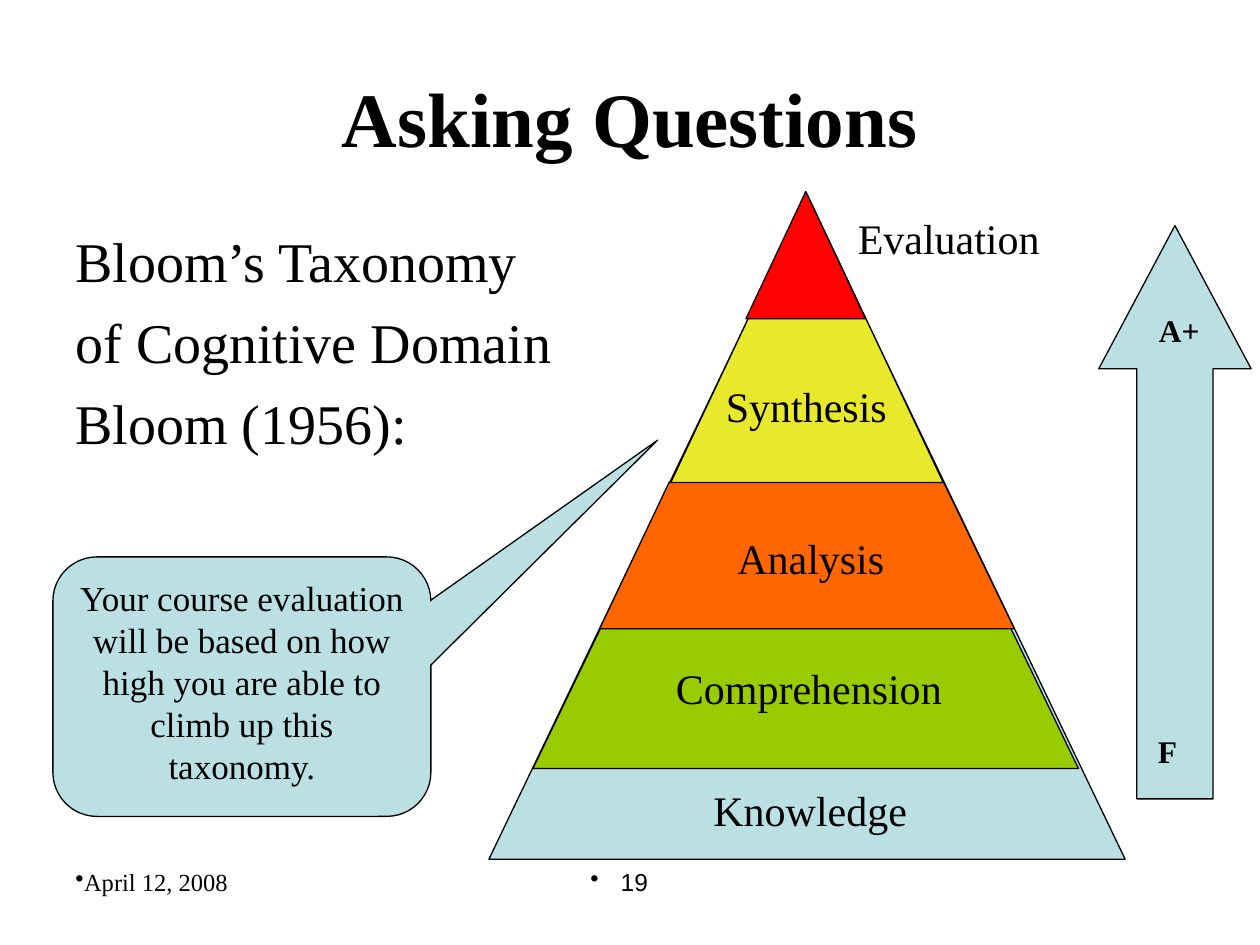
from dataclasses import dataclass

from lxml.etree import SubElement
from pptx import Presentation
from pptx.dml.color import RGBColor
from pptx.enum.shapes import MSO_SHAPE
from pptx.enum.text import MSO_ANCHOR, PP_ALIGN
from pptx.oxml.ns import qn
from pptx.util import Inches, Pt

# Grid of 100 columns by 75 rows
COLS, ROWS = 100, 75
WIDTH, HEIGHT = Inches(10), Inches(7.5)


@dataclass(frozen=True)
class Theme:
    serif: str = "Times New Roman"
    sans: str = "Arial"
    ink: str = "000000"
    pale: str = "BBE0E3"
    green: str = "99CC00"
    orange: str = "FF6600"
    yellow: str = "E9E92B"
    red: str = "FF0101"
    title: int = 44
    body: int = 32
    label: int = 24
    callout: int = 20
    grade: int = 18
    footer: int = 14
    outline: float = 0.75
    body_gap: float = 7.7


@dataclass(frozen=True)
class Box:
    col: float
    row: float
    cols: float
    rows: float

    def emu(self) -> tuple:
        return x(self.col), y(self.row), x(self.cols), y(self.rows)


@dataclass(frozen=True)
class Tier:
    box: Box
    color: str


@dataclass(frozen=True)
class Label:
    text: str
    box: Box
    align: PP_ALIGN = PP_ALIGN.CENTER


T = Theme()

TIERS = [
    Tier(Box(38.8, 15.6, 50.5, 52.6), T.pale),
    Tier(Box(42.3, 16.1, 43.3, 44.9), T.green),
    Tier(Box(51.3, 15.4, 25.5, 27), T.yellow),
    Tier(Box(59.2, 15.2, 9.5, 10.1), T.red),
]
ANALYSIS_BAND = [(80.5, 49.9), (74.9, 38.3), (53.1, 38.3), (47.6, 49.9)]
LABELS = [
    Label("Knowledge", Box(47.2, 61.8, 34.2, 5)),
    Label("Comprehension", Box(52.4, 52.1, 23.6, 5)),
    Label("Analysis", Box(57, 41.8, 14.7, 5)),
    Label("Synthesis", Box(55.7, 29.7, 16.6, 5)),
    Label("Evaluation", Box(67.1, 16.4, 18.8, 5), PP_ALIGN.LEFT),
]
GRADES = [
    Label("F", Box(90.9, 57.6, 5.2, 4), PP_ALIGN.LEFT),
    Label("A+", Box(91, 24.2, 6.7, 4), PP_ALIGN.LEFT),
]


def x(cols: float) -> int:
    return round(WIDTH * cols / COLS)


def y(rows: float) -> int:
    return round(HEIGHT * rows / ROWS)


def write(sp, lines: list, size: int, align=PP_ALIGN.LEFT, bold=False,
          font=T.serif, gap: float = 0, anchor=MSO_ANCHOR.TOP):
    tf = sp.text_frame
    tf.word_wrap = True
    tf.vertical_anchor = anchor
    tf.text = "\n".join(lines)
    for i, p in enumerate(tf.paragraphs):
        p.alignment = align
        p.space_before = Pt(gap if i else 0)
        p.font.name, p.font.size, p.font.bold = font, Pt(size), bold
        p.font.color.rgb = RGBColor.from_string(T.ink)
    return sp


def add_text(shapes, box: Box, lines: list, size: int, **style):
    return write(shapes.add_textbox(*box.emu()), lines, size, **style)


def paint(sp, color: str):
    sp.shadow.inherit = False
    sp.fill.solid()
    sp.fill.fore_color.rgb = RGBColor.from_string(color)
    sp.line.color.rgb = RGBColor.from_string(T.ink)
    sp.line.width = Pt(T.outline)
    return sp


def add_shape(shapes, kind: MSO_SHAPE, box: Box, color: str, *adjustments: float):
    sp = paint(shapes.add_shape(kind, *box.emu()), color)
    for i, value in enumerate(adjustments):
        sp.adjustments[i] = value
    return sp


def add_bullet(sp, hang: float = 0) -> None:
    pPr = sp.text_frame.paragraphs[0]._p.get_or_add_pPr()
    pPr.set("marL", str(x(hang)))
    pPr.set("indent", str(-x(hang)))
    bullet = pPr.makeelement(qn("a:buChar"), {"char": "•"})
    pPr.insert_element_before(bullet, "a:tabLst", "a:defRPr", "a:extLst")


def add_pyramid(shapes) -> None:
    for tier in TIERS:
        add_shape(shapes, MSO_SHAPE.ISOSCELES_TRIANGLE, tier.box, tier.color)
    points = [(x(c), y(r)) for c, r in ANALYSIS_BAND]
    band = shapes.build_freeform(*points[0])
    band.add_line_segments(points[1:], close=True)
    paint(band.convert_to_shape(), T.orange)
    for label in LABELS:
        add_text(shapes, label.box, [label.text], T.label, align=label.align)


def add_grade_arrow(shapes) -> None:
    add_shape(shapes, MSO_SHAPE.UP_ARROW, Box(87.2, 17.9, 12.1, 45.5), T.pale, 0.5, 0.94)
    for grade in GRADES:
        add_text(shapes, grade.box, [grade.text], T.grade, align=grade.align, bold=True)


def main() -> None:
    prs = Presentation()
    prs.slide_width, prs.slide_height = WIDTH, HEIGHT
    s = prs.slides.add_slide(prs.slide_layouts[6])

    # Title and introduction
    add_text(s.shapes, Box(5, 3, 90, 12.5), ["Asking Questions"], T.title,
             align=PP_ALIGN.CENTER, bold=True, anchor=MSO_ANCHOR.MIDDLE)
    add_text(s.shapes, Box(5, 17.5, 39.9, 21.9),
             ["Bloom’s Taxonomy", "of Cognitive Domain", "Bloom (1956):"],
             T.body, gap=T.body_gap)

    # Taxonomy pyramid
    add_pyramid(s.shapes)

    # Callout
    callout = add_shape(s.shapes, MSO_SHAPE.ROUNDED_RECTANGULAR_CALLOUT,
                        Box(4.2, 44.2, 30, 20.6), T.pale, 1.1, -0.95, 0.17)
    write(callout, ["Your course evaluation will be based on how high "
                    "you are able to climb up this taxonomy."],
          T.callout, align=PP_ALIGN.CENTER)

    # Grade scale
    add_grade_arrow(s.shapes.add_group_shape().shapes)

    # Footer
    add_bullet(add_text(s.shapes, Box(5, 68.3, 23.3, 5.2), ["April 12, 2008"], T.footer))
    number = add_text(s.shapes, Box(34.2, 68.3, 31.7, 5.2), ["19"], T.footer,
                      align=PP_ALIGN.CENTER, font=T.sans)
    number.text_frame.margin_left, number.text_frame.margin_right = 0, x(1.8)
    add_bullet(number, hang=2.4)

    prs.save("out.pptx")


if __name__ == "__main__":
    main()
